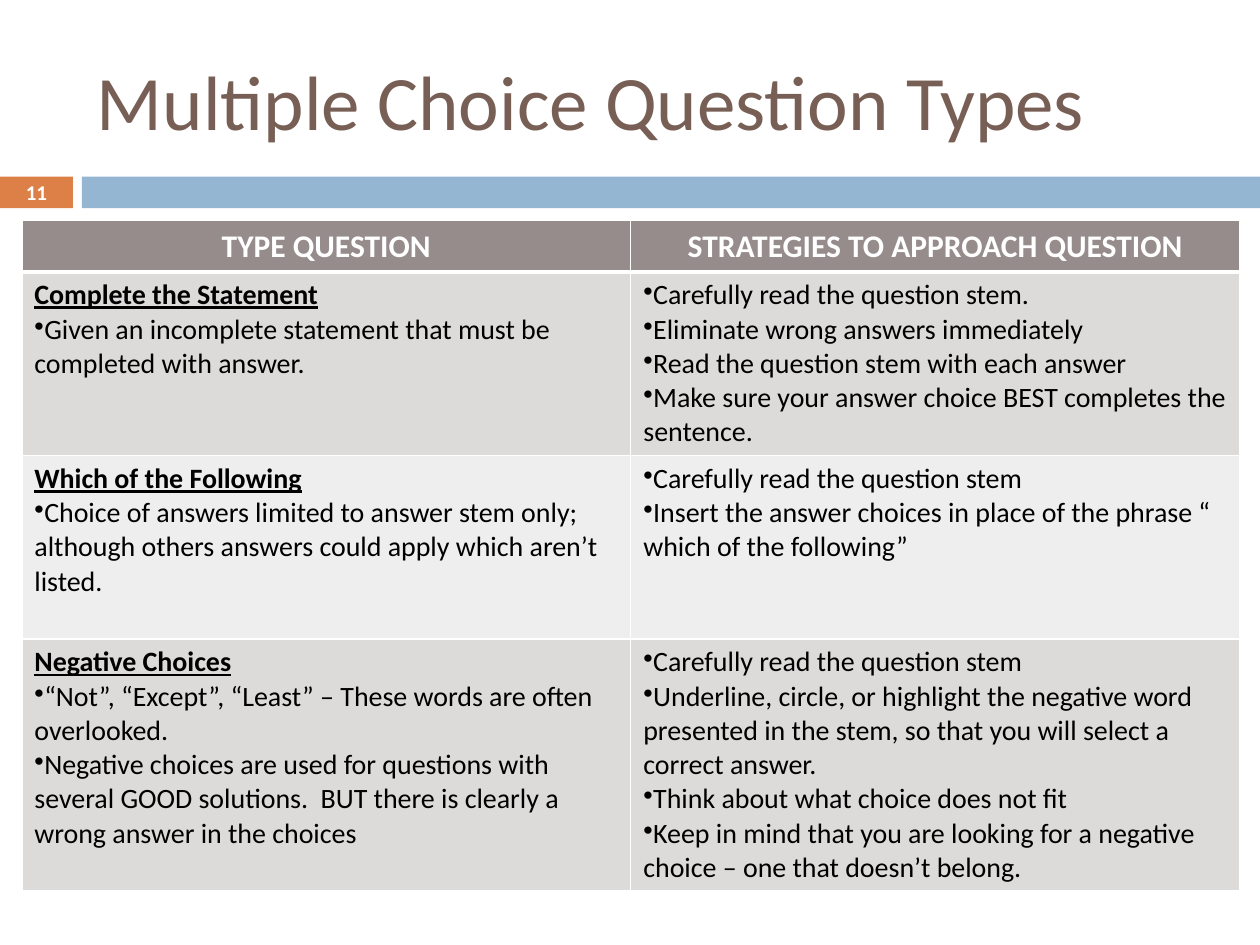
from lxml import etree
from pptx import Presentation
from pptx.dml.color import RGBColor
from pptx.enum.shapes import MSO_SHAPE
from pptx.enum.text import MSO_ANCHOR, PP_ALIGN
from pptx.oxml.ns import qn
from pptx.util import Cm, Pt

RECTANGLE = MSO_SHAPE.RECTANGLE
MIDDLE = MSO_ANCHOR.MIDDLE
LEFT, CENTER = PP_ALIGN.LEFT, PP_ALIGN.CENTER
TITLE_ONLY = 5

WHITE, BLACK = "FFFFFF", "000000"
BROWN, ORANGE, BLUE = "775F55", "DD8047", "94B6D2"
HEADER_FILL = "968C8C"
BAND_FILLS = ["DDDADA", "EFEEEE"]

HEADINGS = ["TYPE QUESTION", "STRATEGIES TO APPROACH QUESTION"]
QUESTION_TYPES = [
    ("Complete the Statement",
     ["Given an incomplete statement that must be completed with answer."],
     ["Carefully read the question stem.",
      "Eliminate wrong answers immediately",
      "Read the question stem with each answer",
      "Make sure your answer choice BEST completes the sentence."]),
    ("Which of the Following",
     ["Choice of answers limited to answer stem only; although others answers "
      "could apply which aren’t listed."],
     ["Carefully read the question stem",
      "Insert the answer choices in place of the phrase “ which of the following”"]),
    ("Negative Choices",
     ["“Not”, “Except”, “Least” – These words are often overlooked.",
      "Negative choices are used for questions with several GOOD solutions.  "
      "BUT there is clearly a wrong answer in the choices"],
     ["Carefully read the question stem",
      "Underline, circle, or highlight the negative word presented in the stem, "
      "so that you will select a correct answer.",
      "Think about what choice does not fit",
      "Keep in mind that you are looking for a negative choice – one that "
      "doesn’t belong."]),
]
ROW_HEIGHTS = [1.03, 3.7, 3.7, 5.08]

HEADER_FORMAT = {"size": Pt(18), "bold": True}
NAME_FORMAT = {"size": Pt(16), "bold": True, "underline": True}
BODY_FORMAT = {"size": Pt(16), "bold": False}


def color(value):
    """Turn a hex string into a colour."""
    return RGBColor.from_string(value)


def write(para, text, ink, formats, align=LEFT):
    """Add one formatted span to a paragraph."""
    para.alignment = align
    span = para.add_run()
    span.text = text
    span.font.name = "Calibri"
    span.font.color.rgb = color(ink)
    for name, value in formats.items():
        setattr(span.font, name, value)


def add_bullet(para):
    """Give a paragraph a round bullet without a hanging indent."""
    props = para._p.get_or_add_pPr()
    props.set("marL", "0")
    props.set("indent", "0")
    etree.SubElement(props, qn("a:buChar"), char="•")


def add_title(page, left, top, width, height):
    """Place the slide title in the template's placeholder."""
    title = page.shapes.title
    title.left, title.top, title.width, title.height = left, top, width, height
    frame = title.text_frame
    frame.vertical_anchor = MIDDLE
    write(frame.paragraphs[0], "Multiple Choice Question Types", BROWN, {"size": Pt(44)})


def add_bar(page, left, top, width, height, fill):
    """Draw a plain filled rectangle."""
    bar = page.shapes.add_shape(RECTANGLE, left, top, width, height)
    bar.shadow.inherit = False
    bar.fill.solid()
    bar.fill.fore_color.rgb = color(fill)
    bar.line.fill.background()


def add_number_band(page, left, top, width, height):
    """Draw the number badge and the band beside it."""
    badge_width, gap = Cm(1.47), Cm(0.18)
    band_offset = badge_width + gap
    add_bar(page, left, top, badge_width, height, ORANGE)
    add_bar(page, left + band_offset, top, width - band_offset, height, BLUE)
    box = page.shapes.add_textbox(left, top, badge_width, height)
    frame = box.text_frame
    frame.word_wrap = True
    frame.vertical_anchor = MIDDLE
    frame.margin_top = frame.margin_bottom = 0
    write(frame.paragraphs[0], "11", WHITE, {"size": Pt(12), "bold": True}, CENTER)


def style_cell(cell, fill, edges):
    """Set a cell's white borders, widths in points by side, and its fill."""
    props = cell._tc.get_or_add_tcPr()
    for side, points in edges.items():
        line = etree.SubElement(props, qn(f"a:ln{side}"), w=str(Pt(points)))
        solid = etree.SubElement(line, qn("a:solidFill"))
        etree.SubElement(solid, qn("a:srgbClr"), val=WHITE)
    cell.fill.solid()
    cell.fill.fore_color.rgb = color(fill)


def fill_cell(cell, bullets, name=None):
    """Write an optional underlined name and then a bulleted list."""
    frame = cell.text_frame
    lines = ([name] if name else []) + bullets
    for index, text in enumerate(lines):
        para = frame.add_paragraph() if index else frame.paragraphs[0]
        is_name = name is not None and index == 0
        write(para, text, BLACK, NAME_FORMAT if is_name else BODY_FORMAT)
        if not is_name:
            add_bullet(para)


def add_strategy_table(page, left, top, width):
    """Build the table of question types and strategies."""
    height = Cm(sum(ROW_HEIGHTS))
    table = page.shapes.add_table(
        len(ROW_HEIGHTS), len(HEADINGS), left, top, width, height).table
    for row, row_height in zip(table.rows, ROW_HEIGHTS):
        row.height = Cm(row_height)
    for column, heading in enumerate(HEADINGS):
        cell = table.cell(0, column)
        style_cell(cell, HEADER_FILL, {"L": 1, "R": 1, "T": 1, "B": 3})
        write(cell.text_frame.paragraphs[0], heading, WHITE, HEADER_FORMAT, CENTER)
    for row, (name, traits, strategies) in enumerate(QUESTION_TYPES, start=1):
        edges = {"L": 1, "R": 1, "T": 3 if row == 1 else 1, "B": 1}
        for column in range(len(HEADINGS)):
            style_cell(table.cell(row, column), BAND_FILLS[(row - 1) % 2], edges)
        fill_cell(table.cell(row, 0), traits, name)
        fill_cell(table.cell(row, 1), strategies)


def main():
    """Build the deck and save it."""
    deck = Presentation()
    deck.slide_width, deck.slide_height = Cm(25.4), Cm(19.05)
    page = deck.slides.add_slide(deck.slide_layouts[TITLE_ONLY])
    add_title(page, Cm(1.7), Cm(0.64), Cm(22.65), Cm(2.75))
    add_number_band(page, 0, Cm(3.56), deck.slide_width, Cm(0.64))
    add_strategy_table(page, Cm(0.44), Cm(4.45), Cm(24.55))
    deck.save("out.pptx")


if __name__ == "__main__":
    main()
